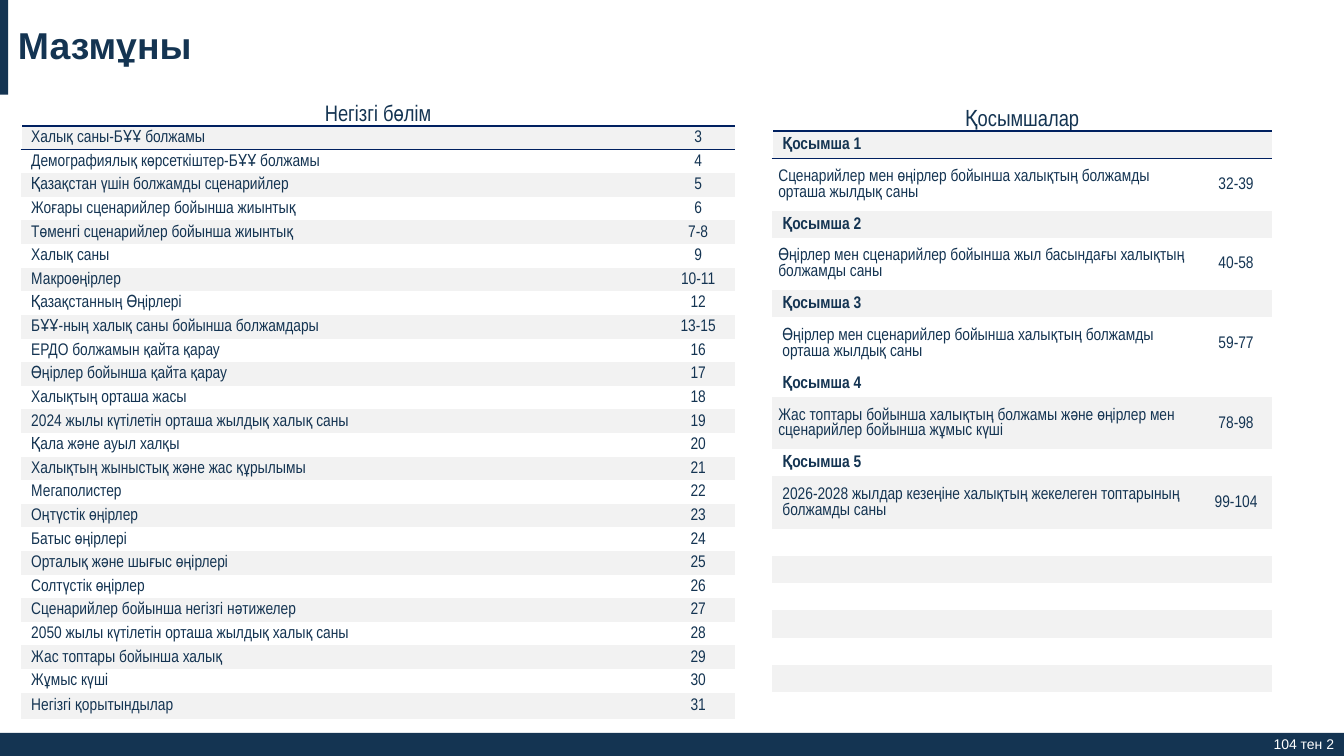
from pptx import Presentation
from pptx.dml.color import RGBColor
from pptx.enum.shapes import MSO_SHAPE
from pptx.enum.text import MSO_ANCHOR, PP_ALIGN
from pptx.oxml.ns import qn
from pptx.util import Inches, Pt
from lxml.etree import SubElement

NAVY = RGBColor(0x14, 0x34, 0x52)
RULE_BLUE = RGBColor(0x00, 0x20, 0x60)
STRIPE_GREY = RGBColor(0xF2, 0xF2, 0xF2)
WHITE = RGBColor(0xFF, 0xFF, 0xFF)
PLAIN_TABLE_STYLE = "{2D5ABB26-0587-4C30-8999-92F81FD0307C}"
ENTRY_INDENT = 0.04

MAIN_SECTIONS = [
    ("Халық саны-БҰҰ болжамы", "3"),
    ("Демографиялық көрсеткіштер-БҰҰ болжамы", "4"),
    ("Қазақстан үшін болжамды сценарийлер", "5"),
    ("Жоғары сценарийлер бойынша жиынтық", "6"),
    ("Төменгі сценарийлер бойынша жиынтық", "7-8"),
    ("Халық саны", "9"),
    ("Макроөңірлер", "10-11"),
    ("Қазақстанның Өңірлері", "12"),
    ("БҰҰ-ның халық саны бойынша болжамдары", "13-15"),
    ("ЕРДО болжамын қайта қарау", "16"),
    ("Өңірлер бойынша қайта қарау", "17"),
    ("Халықтың орташа жасы", "18"),
    ("2024 жылы күтілетін орташа жылдық халық саны", "19"),
    ("Қала және ауыл халқы", "20"),
    ("Халықтың жыныстық және жас құрылымы", "21"),
    ("Мегаполистер", "22"),
    ("Оңтүстік өңірлер", "23"),
    ("Батыс өңірлері", "24"),
    ("Орталық және шығыс өңірлері", "25"),
    ("Солтүстік өңірлер", "26"),
    ("Сценарийлер бойынша негізгі нәтижелер", "27"),
    ("2050 жылы күтілетін орташа жылдық халық саны", "28"),
    ("Жас топтары бойынша халық", "29"),
    ("Жұмыс күші", "30"),
    ("Негізгі қорытындылар", "31"),
]
# Description, pages, indent
APPENDICES = [
    ("Сценарийлер мен өңірлер бойынша халықтың болжамды орташа жылдық саны", "32-39", 0),
    ("Өңірлер мен сценарийлер бойынша жыл басындағы халықтың болжамды саны", "40-58", 0),
    ("Өңірлер мен сценарийлер бойынша халықтың болжамды орташа жылдық саны", "59-77",
     ENTRY_INDENT),
    ("Жас топтары бойынша халықтың болжамы және өңірлер мен сценарийлер бойынша жұмыс күші",
     "78-98", 0),
    ("2026-2028 жылдар кезеңіне халықтың жекелеген топтарының болжамды саны", "99-104",
     ENTRY_INDENT),
]
SPARE_ROWS = 7
APPENDIX_STRIPES = {1, 3, 5, 8, 10, 12, 14, 16}


def add_bar(slide, left, top, width, height):
    bar = slide.shapes.add_shape(MSO_SHAPE.RECTANGLE, *map(Inches, (left, top, width, height)))
    bar.shadow.inherit = False
    bar.fill.solid()
    bar.fill.fore_color.rgb = NAVY
    bar.line.fill.background()


def write(paragraph, text, size, font_name="Arial Narrow", color=NAVY, bold=False):
    run = paragraph.add_run()
    run.text = text
    for name, value in {"size": Pt(size), "name": font_name, "bold": bold}.items():
        setattr(run.font, name, value)
    run.font.color.rgb = color


def add_label(slide, place, text, size, color, bold=False, align=PP_ALIGN.LEFT, right_inset=0.1):
    frame = slide.shapes.add_textbox(*map(Inches, place)).text_frame
    frame.word_wrap = True
    frame.vertical_anchor = MSO_ANCHOR.MIDDLE
    frame.margin_right = Inches(right_inset)
    paragraph = frame.paragraphs[0]
    paragraph.alignment = align
    write(paragraph, text, size, "Arial", color, bold)
    return paragraph


def add_plain_table(slide, left, top, column_widths, row_heights):
    size = (sum(column_widths), sum(row_heights))
    table = slide.shapes.add_table(len(row_heights), len(column_widths),
                                   *map(Inches, (left, top, *size))).table
    table.first_row = table.horz_banding = False
    table._tbl.tblPr.find(qn("a:tableStyleId")).text = PLAIN_TABLE_STYLE
    for column, width in zip(table.columns, column_widths):
        column.width = Inches(width)
    for row, height in zip(table.rows, row_heights):
        row.height = Inches(height)
    return table


def add_border(cell, side, color):
    """Draw a 1 pt cell border; call before filling, in the order L, R, T, B."""
    line = SubElement(cell._tc.get_or_add_tcPr(), qn(f"a:ln{side}"), w=str(Pt(1)))
    SubElement(SubElement(line, qn("a:solidFill")), qn("a:srgbClr"), val=str(color))


def fill_cell(cell, shaded):
    if shaded:
        cell.fill.solid()
        cell.fill.fore_color.rgb = STRIPE_GREY
    else:
        cell.fill.background()


def set_cell(cell, text, size=12, left_inset=0.0, right_inset=0.0, indent=0.0,
             align=PP_ALIGN.LEFT, anchor=MSO_ANCHOR.MIDDLE, bold=False):
    format_values = {
        "margin_left": Inches(left_inset), "margin_right": Inches(right_inset),
        "margin_top": Inches(0.01), "margin_bottom": 0, "vertical_anchor": anchor,
    }
    for name, value in format_values.items():
        setattr(cell, name, value)
    paragraph = cell.text_frame.paragraphs[0]
    paragraph.alignment = align
    paragraph._p.get_or_add_pPr().set("marL", str(Inches(indent)))
    if text:
        write(paragraph, text, size, bold=bold)
    else:
        SubElement(paragraph._p, qn("a:endParaRPr"), sz=str(size * 100))


def add_contents_table(slide, left, column_widths, row_heights, heading, entries, stripes):
    """Each entry is (text, pages, indent, bold); bold entries span both columns."""
    table = add_plain_table(slide, left, 0.94, column_widths, row_heights)
    heading_cell, covered_cell = table.cell(0, 0), table.cell(0, 1)
    set_cell(heading_cell, heading, 16, 0.01, 0.01, align=PP_ALIGN.CENTER,
             anchor=MSO_ANCHOR.BOTTOM)
    set_cell(covered_cell, "")
    heading_cell.merge(covered_cell)
    add_border(table.cell(1, 0), "L", WHITE)
    for column in range(2):
        add_border(table.cell(0, column), "B", RULE_BLUE)
        add_border(table.cell(1, column), "T", RULE_BLUE)
        fill_cell(table.cell(0, column), False)
    for row, (text, pages, indent, bold) in enumerate(entries, start=1):
        text_cell, pages_cell = table.cell(row, 0), table.cell(row, 1)
        set_cell(text_cell, text, left_inset=0.06, right_inset=0.01, indent=indent, bold=bold)
        set_cell(pages_cell, pages, align=PP_ALIGN.CENTER)
        for cell in (text_cell, pages_cell):
            fill_cell(cell, row in stripes)
        if bold:
            text_cell.merge(pages_cell)
    return table


def add_main_contents(slide):
    entries = [(text, pages, ENTRY_INDENT, False) for text, pages in MAIN_SECTIONS]
    entry_height = (6.2 - 0.31 - 0.26) / (len(entries) - 1)
    heights = [0.31] + [entry_height] * (len(entries) - 1) + [0.26]
    add_contents_table(slide, 0.21, (6.35, 0.73), heights, "Негізгі бөлім", entries,
                       range(1, len(entries) + 1, 2))


def add_appendix_contents(slide):
    entries = []
    for number, (text, pages, indent) in enumerate(APPENDICES, start=1):
        entries.append((f"Қосымша {number}", "", ENTRY_INDENT, True))
        entries.append((text, pages, indent, False))
    entries += [("", "", 0, False)] * SPARE_ROWS
    heights = [0.36] + [0.27, 0.52] * len(APPENDICES) + [0.27] * SPARE_ROWS
    table = add_contents_table(slide, 7.66, (4.24, 0.72), heights, "Қосымшалар", entries,
                               APPENDIX_STRIPES)
    table.cell(14, 0).merge(table.cell(14, 1))


def main():
    presentation = Presentation()
    presentation.slide_width = Inches(13.33)
    presentation.slide_height = Inches(7.5)
    slide = presentation.slides.add_slide(presentation.slide_layouts[6])

    add_bar(slide, 0, 7.27, 13.33, 0.23)
    add_bar(slide, 0, 0, 0.08, 0.94)
    add_label(slide, (12.04, 7.27, 1.19, 0.23), "104 тен 2", 10, WHITE,
              align=PP_ALIGN.RIGHT, right_inset=0)
    title = add_label(slide, (0.08, 0, 13.25, 0.94), "Мазмұны", 26.7, NAVY, bold=True)
    title.line_spacing = 0.9
    add_main_contents(slide)
    add_appendix_contents(slide)
    presentation.save("out.pptx")


if __name__ == "__main__":
    main()
